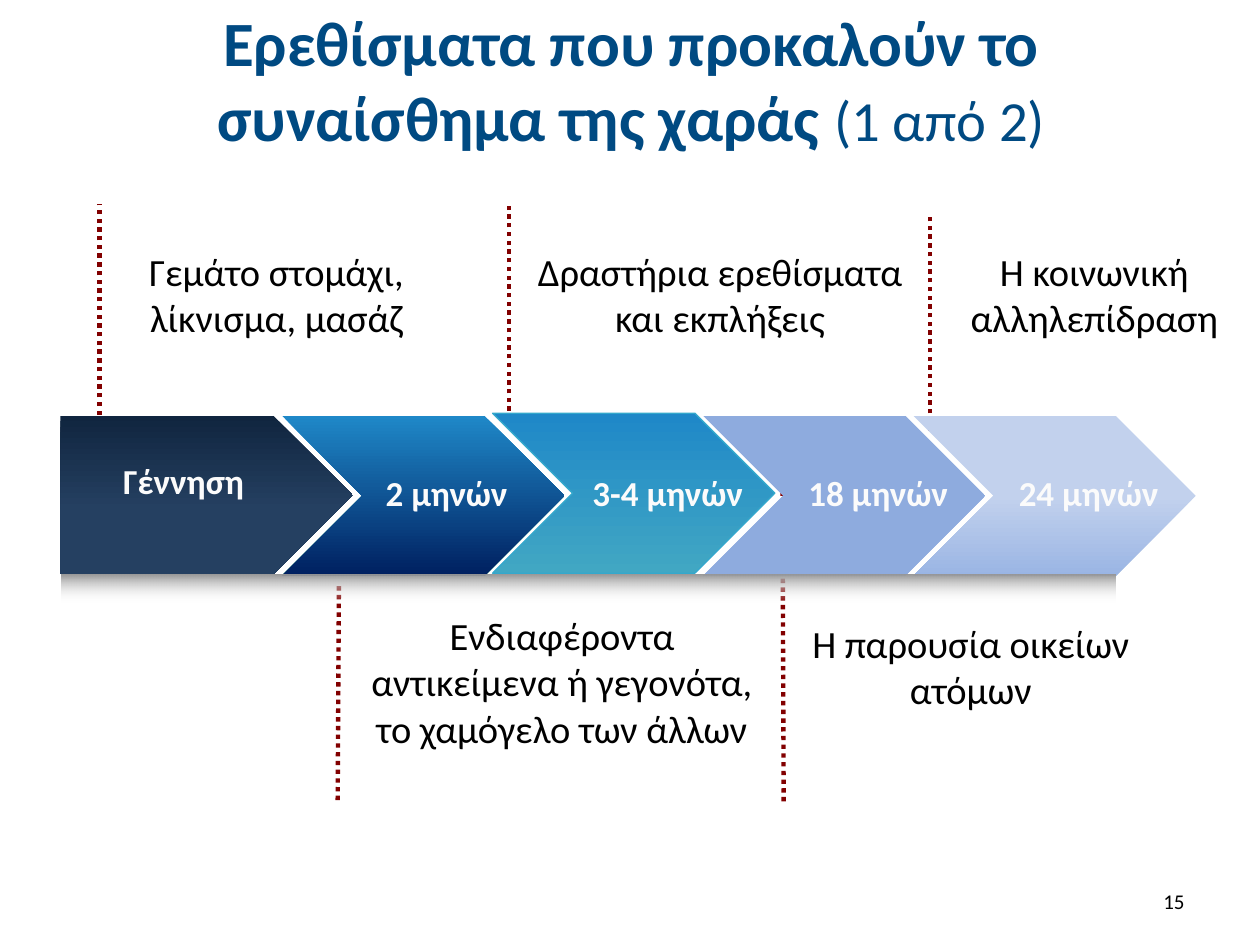
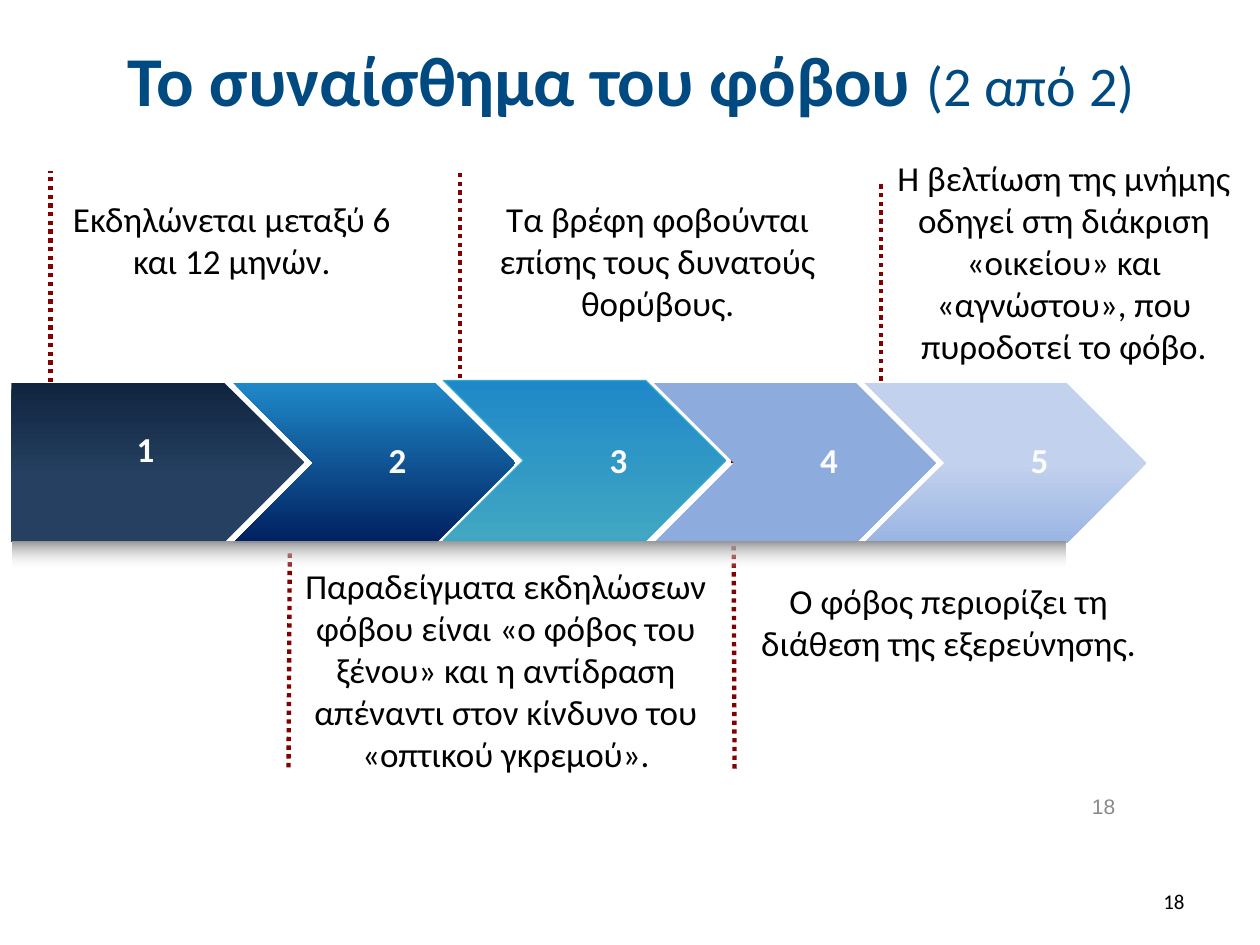
from dataclasses import dataclass

from lxml import etree
from pptx import Presentation
from pptx import util as u
from pptx.dml.color import RGBColor
from pptx.enum import dml, shapes, text
from pptx.oxml.ns import qn


@dataclass(frozen=True)
class Theme:
    face: str = "Calibri"
    number_face: str = "Arial"
    title: str = "004A82"
    body: str = "000000"
    label: str = "FBFBFB"
    marker: str = "820000"
    grey: str = "898989"
    edge: str = "34A8CC"
    label_size: float = 20
    number_size: float = 12
    marker_width: float = 2.5


THEME = Theme()
TITLE_BOX = (0.51, 0.13, 9, 0.99)
NUMBER_BOX = (7.17, 6.95, 2.33, 0.4)

STAGE_FILLS = [
    [(0, "10253F"), (59, "254061"), (100, "254061")],
    [(0, "1F88C8"), (100, "002060")],
    [(0, "1F88C8"), (100, "41A7C3")],
    [(0, "8EABDE"), (50, "8EABDE"), (100, "8FACE1")],
    [(0, "C2D1ED"), (50, "C2D1ED"), (100, "9AB5E4")],
]
SHADOW_FILL = [(0, "969696"), (100, "FFFFFF", 0)]
STAGE_STEP = 1.67

MARKERS = [
    (6.9, 0.12, 6.9, -1.61),
    (5.74, 3.06, 5.73, 0.55),
    (3.56, 0.03, 3.56, -1.7),
    (0.31, 0.34, 0.31, -1.68),
    (2.2, 3.05, 2.21, 1.32),
]


def inches(*lengths):
    return [u.Inches(length) for length in lengths]


def style(font, size, color, bold=False, face=THEME.face):
    font.name = face
    font.size = u.Pt(size)
    font.bold = bold
    font.color.rgb = RGBColor.from_string(color)


def add_text(page, box, words, size, color, align, bold=False,
             face=THEME.face, anchor=text.MSO_ANCHOR.TOP):
    frame = page.shapes.add_textbox(*inches(*box)).text_frame
    frame.word_wrap = True
    frame.vertical_anchor = anchor
    para = frame.paragraphs[0]
    para.text = words
    para.alignment = align
    style(para.font, size, color, bold, face)


def add_number(page, box, number, color=THEME.body, face=THEME.face):
    add_text(page, box, number, THEME.number_size, color, text.PP_ALIGN.RIGHT,
             face=face, anchor=text.MSO_ANCHOR.MIDDLE)


def set_title(page, heading, counter, heading_size, counter_size):
    title = page.shapes.title
    title.left, title.top, title.width, title.height = inches(*TITLE_BOX)
    frame = title.text_frame
    frame.auto_size = text.MSO_AUTO_SIZE.NONE
    frame.vertical_anchor = text.MSO_ANCHOR.MIDDLE
    para = frame.paragraphs[0]
    para.alignment = text.PP_ALIGN.CENTER
    for words, size, bold in ((heading + " ", heading_size, True),
                              (counter, counter_size, False)):
        span = para.add_run()
        span.text = words
        style(span.font, size, THEME.title, bold)


def fill_gradient(shape, stops):
    shape.fill.gradient()
    shape.fill.gradient_angle = 270
    stop_list = next(shape.element.iter(qn("a:gsLst")))
    for old_stop in list(stop_list):
        stop_list.remove(old_stop)
    for position, color, *alpha in stops:
        stop = etree.SubElement(stop_list, qn("a:gs"), pos=str(position * 1000))
        shade = etree.SubElement(stop, qn("a:srgbClr"), val=color)
        for value in alpha:
            etree.SubElement(shade, qn("a:alpha"), val=str(value * 1000))


def add_markers(page, left, top):
    for x1, y1, x2, y2 in MARKERS:
        marker = page.shapes.add_connector(
            shapes.MSO_CONNECTOR.STRAIGHT,
            *inches(left + x1, top + y1, left + x2, top + y2))
        marker.line.color.rgb = RGBColor.from_string(THEME.marker)
        marker.line.width = u.Pt(THEME.marker_width)
        marker.line.dash_style = dml.MSO_LINE.ROUND_DOT
        etree.SubElement(marker.element.spPr, qn("a:effectLst"))


def add_band(page, left, top):
    group = page.shapes.add_group_shape()

    def add_part(kind, x, y, width, height, stops):
        part = group.shapes.add_shape(
            kind, *inches(left + x, top + y, width, height))
        part.shadow.inherit = False
        part.line.fill.background()
        fill_gradient(part, stops)
        return part

    for index in (2, 0, 1, 3, 4):
        stops = STAGE_FILLS[index]
        if index == 0:
            add_part(shapes.MSO_SHAPE.PENTAGON, 0, 0, 2.32, 1.26, stops)
            continue
        raised = index == 2
        stage = add_part(shapes.MSO_SHAPE.CHEVRON,
                         1.76 + STAGE_STEP * (index - 1),
                         -0.02 if raised else 0, 2.24, 1.27, stops)
        if raised:
            stage.line.color.rgb = RGBColor.from_string(THEME.edge)
            stage.line.width = u.Pt(0.75)
    add_part(shapes.MSO_SHAPE.RECTANGLE, 0.01, 1.26, 8.36, 0.22, SHADOW_FILL)


def add_labels(page, left, top, labels, first_align):
    for index, label in enumerate(labels):
        x = 0.4 if index == 0 else 2.4 + STAGE_STEP * (index - 1)
        y = 0.3 if index == 0 else 0.39
        width = 1.33 if index < 2 else 1.5
        align = first_align if index == 0 else text.PP_ALIGN.CENTER
        add_text(page, (left + x, top + y, width, 0.44), label,
                 THEME.label_size, THEME.label, align, bold=True)


def add_timeline(page, left, top, captions, caption_size, labels,
                 first_align=text.PP_ALIGN.CENTER):
    add_markers(page, left, top)
    add_band(page, left, top)
    for x, y, width, height, words in captions:
        add_text(page, (left + x, top + y, width, height), words,
                 caption_size, THEME.body, text.PP_ALIGN.CENTER)
    add_labels(page, left, top, labels, first_align)


def add_page(deck, heading, counter, heading_size, counter_size, number):
    page = deck.slides.add_slide(deck.slide_layouts[5])
    set_title(page, heading, counter, heading_size, counter_size)
    add_number(page, NUMBER_BOX, number)
    return page


def add_joy_page(deck):
    page = add_page(deck, "Ερεθίσματα που προκαλούν το συναίσθημα της χαράς",
                    "(1 από 2)", 36, 32.4, "15")
    captions = [
        (0.45, -1.38, 2.53, 0.84, "Γεμάτο στομάχι, λίκνισμα, μασάζ"),
        (3.61, -1.38, 3.25, 0.84, "Δραστήρια ερεθίσματα και εκπλήξεις"),
        (7.05, -1.38, 2.31, 0.84, "Η κοινωνική αλληλεπίδραση"),
        (2.25, 1.51, 3.46, 1.21,
         "Ενδιαφέροντα αντικείμενα ή γεγονότα, το χαμόγελο των άλλων"),
        (5.84, 1.57, 2.77, 0.84, "Η παρουσία οικείων ατόμων"),
    ]
    labels = ["Γέννηση", "2 μηνών", "3-4 μηνών", "18 μηνών", "24 μηνών"]
    add_timeline(page, 0.48, 3.3, captions, 22, labels, text.PP_ALIGN.LEFT)


def add_fear_page(deck):
    page = add_page(deck, "Το συναίσθημα του φόβου", "(2 από 2)", 40, 32, "18")
    captions = [
        (0.39, -1.52, 2.72, 0.77, "Εκδηλώνεται μεταξύ 6 και 12 μηνών."),
        (3.56, -1.52, 3.14, 1.11,
         "Τα βρέφη φοβούνται επίσης τους δυνατούς θορύβους."),
        (6.79, -1.85, 3.13, 1.78,
         "Η βελτίωση της μνήμης οδηγεί στη διάκριση «οικείου» και "
         "«αγνώστου», που πυροδοτεί το φόβο."),
        (2.23, 1.39, 3.39, 1.78,
         "Παραδείγματα εκδηλώσεων φόβου είναι «ο φόβος του ξένου» και η "
         "αντίδραση απέναντι στον κίνδυνο του «οπτικού γκρεμού»."),
        (5.64, 1.51, 3.6, 0.77,
         "Ο φόβος περιορίζει τη διάθεση της εξερεύνησης."),
    ]
    add_timeline(page, 0.09, 3.04, captions, 20, ["1", "2", "3", "4", "5"])
    add_number(page, (8.41, 6.26, 0.54, 0.27), "18", THEME.grey,
               THEME.number_face)


def main():
    deck = Presentation()
    deck.slide_width, deck.slide_height = inches(10, 7.5)
    add_joy_page(deck)
    add_fear_page(deck)
    deck.save("out.pptx")


if __name__ == "__main__":
    main()
